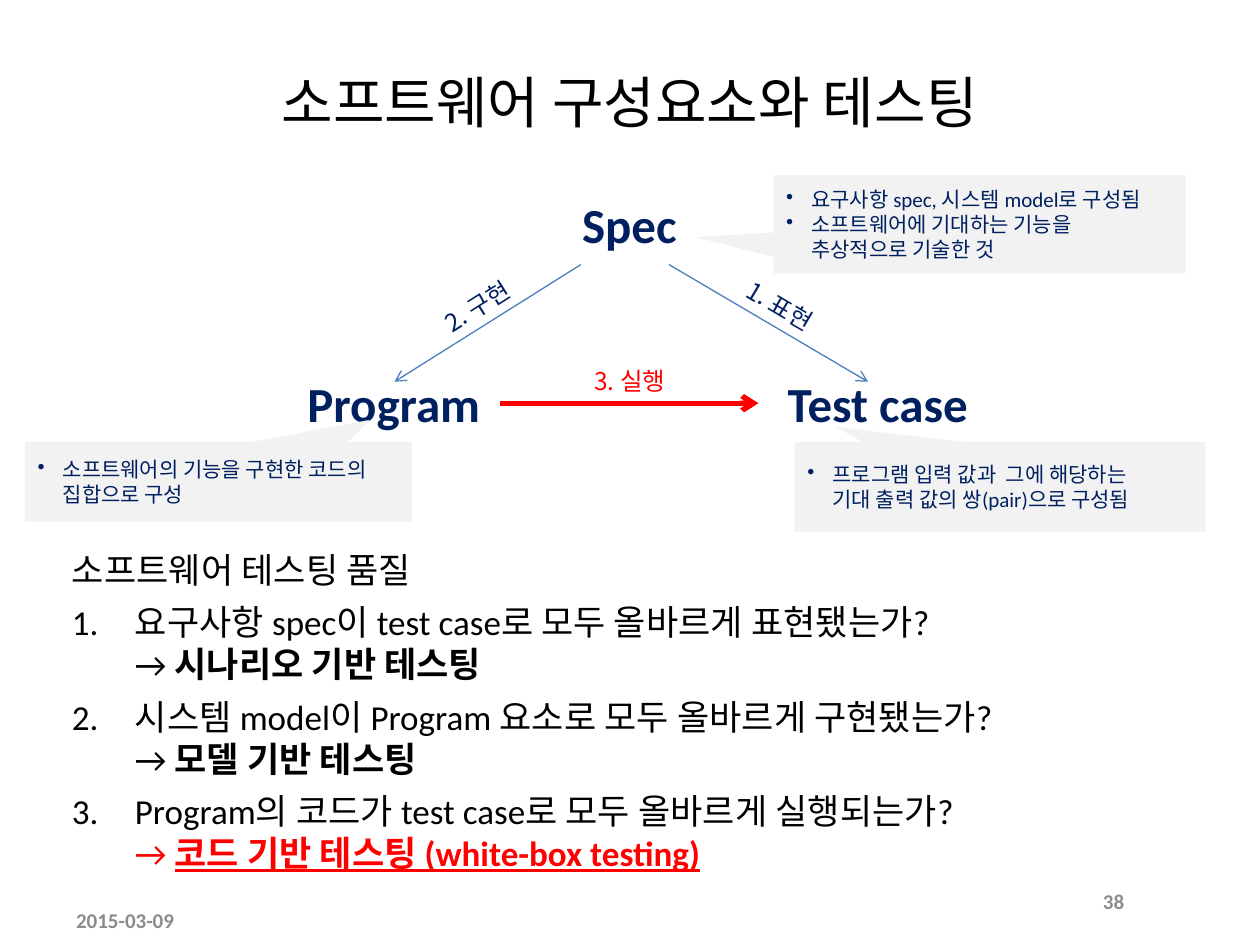
from lxml import etree
from pptx import Presentation
from pptx.dml.color import RGBColor
from pptx.enum.shapes import MSO_CONNECTOR, MSO_SHAPE
from pptx.enum.text import MSO_ANCHOR, PP_ALIGN
from pptx.oxml.ns import qn
from pptx.util import Inches, Pt

LEFT, CENTER, RIGHT = PP_ALIGN.LEFT, PP_ALIGN.CENTER, PP_ALIGN.RIGHT
TOP, MIDDLE = MSO_ANCHOR.TOP, MSO_ANCHOR.MIDDLE
STRAIGHT = MSO_CONNECTOR.STRAIGHT
ROUNDED, CALLOUT = MSO_SHAPE.ROUNDED_RECTANGLE, MSO_SHAPE.RECTANGULAR_CALLOUT

COLORS = {"black": "000000", "navy": "002060", "red": "FF0000",
          "blue": "4B7EBC", "gray": "8C8C8C", "pale": "F2F2F2"}
BODY_FONT, LABEL_FONT = "Calibri", "Noto Sans CJK KR"

TITLE = "소프트웨어 구성요소와 테스팅"
HEADING = "소프트웨어 테스팅 품질"
EMPHASIS = {"bold": True}
KEY_ANSWER = {"bold": True, "underline": True}
QUESTIONS = [
    ("요구사항 spec이 test case로 모두 올바르게 표현됐는가? ",
     "시나리오 기반 테스팅", "black", EMPHASIS),
    ("시스템 model이 Program 요소로 모두 올바르게 구현됐는가? ",
     "모델 기반 테스팅", "black", EMPHASIS),
    ("Program의 코드가 test case로 모두 올바르게 실행되는가? ",
     "코드 기반 테스팅 (white-box testing)", "red", KEY_ANSWER),
]
ELEMENTS = {
    "Spec": (4.36, 1.31, 1.27, 0.94),
    "Program": (2.28, 2.73, 1.69, 0.94),
    "Test case": (6.02, 2.73, 1.89, 0.94),
}
DIAGONALS = [((4.61, 2.1), (3.13, 3.03)), ((5.31, 2.1), (6.89, 3.03))]
STEPS = [
    ("1. 표현", (5.56, 2.26), 30.6, "navy"),
    ("2. 구현", (3.16, 2.26), 327.7, "navy"),
    ("3. 실행", (4.37, 2.86), 0, "red"),
]
CALLOUTS = [
    ((6.14, 1.39, 3.27, 0.78), (-0.69, 0.13),
     ["요구사항 spec, 시스템 model로 구성됨",
      "소프트웨어에 기대하는 기능을 \n추상적으로 기술한 것"]),
    ((6.31, 3.51, 3.26, 0.71), (-0.4, -0.67),
     ["프로그램 입력 값과  그에 해당하는 \n기대 출력 값의 쌍(pair)으로 구성됨"]),
    ((0.2, 3.51, 3.07, 0.63), (0.39, -0.78),
     ["소프트웨어의 기능을 구현한 코드의 \n집합으로 구성"]),
]
FOOTERS = [("2015-03-09", (0.4, 7.1, 1.08, 0.4)), ("38", (7.17, 6.95, 1.85, 0.4))]


def rgb(name):
    return RGBColor.from_string(COLORS[name])


def place(shape, area):
    for side, value in zip(("left", "top", "width", "height"), area):
        setattr(shape, side, Inches(value))


def set_frame(shape, anchor):
    frame = shape.text_frame
    frame.word_wrap = True
    frame.vertical_anchor = anchor
    return frame


def add_text(para, text, size, color, font=BODY_FONT, **formats):
    for index, line in enumerate(text.split("\n")):
        if index:
            para.add_line_break()
        if not line:
            continue
        span = para.add_run()
        span.text = line
        span.font.color.rgb = rgb(color)
        for name, value in {"size": Pt(size), "name": font, "bold": False, **formats}.items():
            setattr(span.font, name, value)
        etree.SubElement(span.font._element, qn("a:ea"), typeface=font)


def set_bullet(para, kind, indent=0, **values):
    properties = para._p.get_or_add_pPr()
    properties.set("marL", str(Inches(indent)))
    properties.set("indent", str(-Inches(indent)))
    etree.SubElement(properties, qn(f"a:{kind}"), **values)


def write_line(shape, text, size, color, align=CENTER, anchor=MIDDLE, **formats):
    para = set_frame(shape, anchor).paragraphs[0]
    para.alignment = align
    add_text(para, text, size, color, **formats)


def add_box(slide, kind, area, fill=None):
    box = slide.shapes.add_shape(kind, *map(Inches, area))
    box.shadow.inherit = False
    box.line.fill.background()
    if fill:
        box.fill.solid()
        box.fill.fore_color.rgb = rgb(fill)
    else:
        box.fill.background()
    return box


def add_arrow(slide, start, end, color, width):
    arrow = slide.shapes.add_connector(STRAIGHT, *map(Inches, (*start, *end)))
    arrow.line.color.rgb = rgb(color)
    arrow.line.width = Pt(width)
    etree.SubElement(arrow.line._get_or_add_ln(), qn("a:tailEnd"), type="arrow")
    etree.SubElement(arrow._element.spPr, qn("a:effectLst"))
    return arrow


def fill_body(body):
    place(body, (0.47, 4.3, 9.09, 2.91))
    frame = set_frame(body, TOP)
    heading = frame.paragraphs[0]
    heading.space_before = Pt(6)
    set_bullet(heading, "buNone")
    add_text(heading, HEADING, 20, "black")
    for question, answer, color, formats in QUESTIONS:
        para = frame.add_paragraph()
        para.space_before = Pt(6)
        set_bullet(para, "buAutoNum", 0.5, type="arabicPeriod")
        add_text(para, question + "\n", 20, "black")
        add_text(para, "→ ", 20, color)
        add_text(para, answer, 20, color, **formats)


def add_callout(slide, area, pointer, items):
    callout = add_box(slide, CALLOUT, area, "pale")
    for index, value in enumerate(pointer):
        callout.adjustments[index] = value
    frame = set_frame(callout, MIDDLE)
    for index, item in enumerate(items):
        para = frame.add_paragraph() if index else frame.paragraphs[0]
        para.alignment = LEFT
        set_bullet(para, "buChar", 0.2, char="•")
        add_text(para, item, 12, "navy")


def main():
    """Build the slide on software elements and testing."""
    deck = Presentation()
    deck.slide_width, deck.slide_height = Inches(10), Inches(7.5)
    slide = deck.slides.add_slide(deck.slide_layouts[1])
    title, body = slide.placeholders
    place(title, (0.5, 0.3, 9, 1.01))
    write_line(title, TITLE, 32, "black")
    fill_body(body)
    for text, area in FOOTERS:
        footer = slide.shapes.add_textbox(*map(Inches, area))
        write_line(footer, text, 12, "gray", RIGHT, bold=True)
    boxes = {}
    for name, area in ELEMENTS.items():
        boxes[name] = add_box(slide, ROUNDED, area)
        write_line(boxes[name], name, 28, "navy", bold=True)
        boxes[name].text_frame.word_wrap = False
    for start, end in DIAGONALS:
        add_arrow(slide, start, end, "blue", 0.75)
    run_arrow = add_arrow(slide, (3.97, 3.2), (6.02, 3.2), "red", 3)
    run_arrow.begin_connect(boxes["Program"], 3)
    run_arrow.end_connect(boxes["Test case"], 1)
    for text, corner, angle, color in STEPS:
        label = slide.shapes.add_textbox(*map(Inches, (*corner, 1.26, 0.34)))
        label.rotation = angle
        write_line(label, text, 14, color, anchor=TOP, font=LABEL_FONT)
    for callout in CALLOUTS:
        add_callout(slide, *callout)
    deck.save("out.pptx")


if __name__ == "__main__":
    main()
